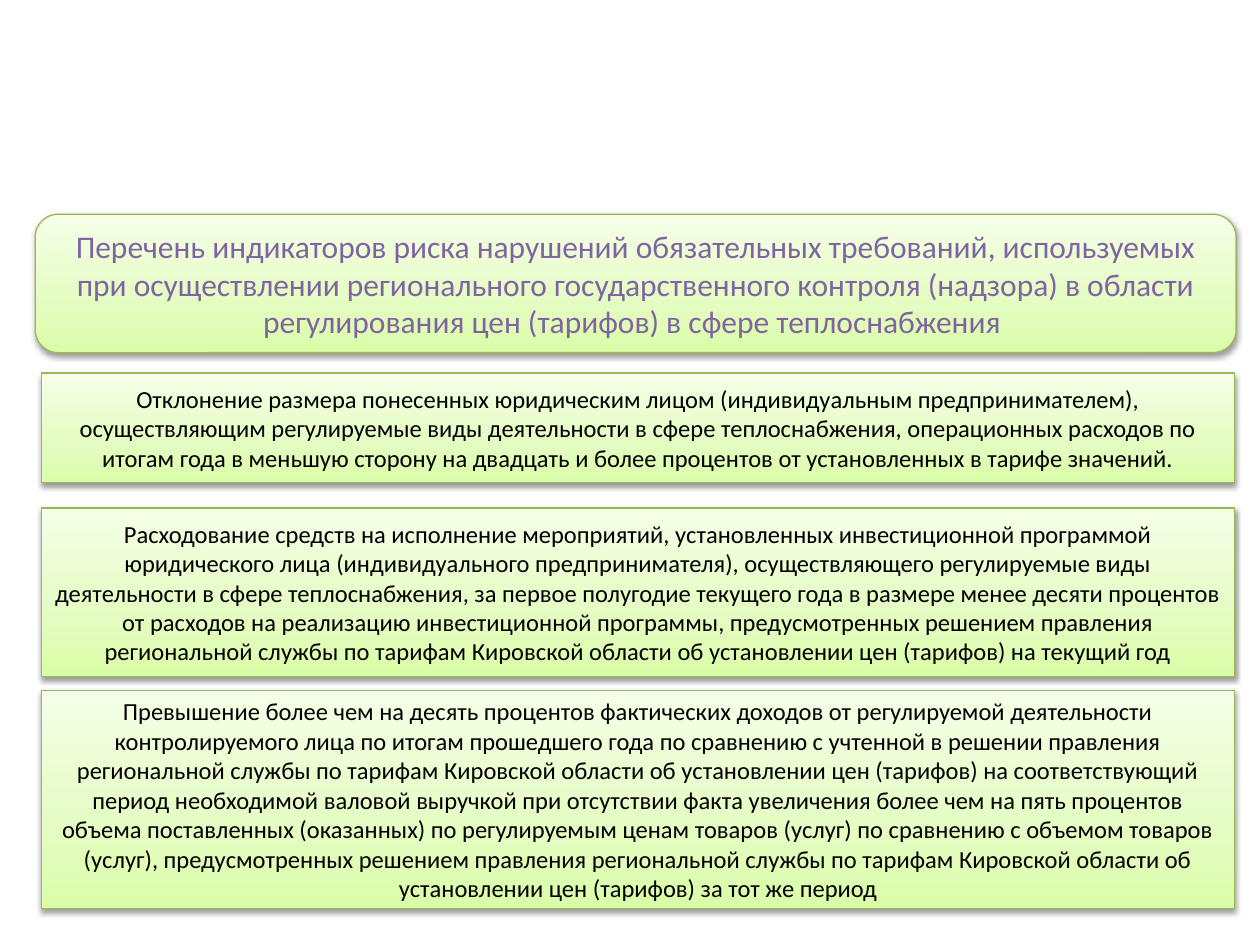
from copy import deepcopy

from lxml.etree import SubElement
from pptx import Presentation
from pptx.dml.color import RGBColor as Rgb
from pptx.enum.shapes import MSO_SHAPE as Shape
from pptx.enum.text import MSO_ANCHOR as Anchor, PP_ALIGN as Align
from pptx.oxml.ns import qn
from pptx.util import Cm, Pt

COLORS = {
    "lime": "DAFDA7",
    "pale_lime": "E4FCC2",
    "mist": "F5FFE7",
    "border": "98B955",
    "shadow": "000000",
    "title": "8064A2",
    "body": "000000",
}
GRADIENT = [(0, "lime"), (0.35, "pale_lime"), (1, "mist")]
TITLE = (
    "Перечень индикаторов риска нарушений обязательных требований, используемых "
    "при осуществлении регионального государственного контроля (надзора) в области "
    "регулирования цен (тарифов) в сфере теплоснабжения "
)
INDICATORS = [
    (7.52, 2.21,
     "Отклонение размера понесенных юридическим лицом (индивидуальным "
     "предпринимателем), осуществляющим регулируемые виды деятельности в сфере "
     "теплоснабжения, операционных расходов по итогам года в меньшую сторону на "
     "двадцать и более процентов от установленных в тарифе значений."),
    (10.24, 3.4,
     "Расходование средств на исполнение мероприятий, установленных инвестиционной "
     "программой юридического лица (индивидуального предпринимателя), "
     "осуществляющего регулируемые виды деятельности в сфере теплоснабжения, за "
     "первое полугодие текущего года в размере менее десяти процентов от расходов "
     "на реализацию инвестиционной программы, предусмотренных решением правления "
     "региональной службы по тарифам Кировской области об установлении цен "
     "(тарифов) на текущий год"),
    (13.92, 4.39,
     "Превышение более чем на десять процентов фактических доходов от регулируемой "
     "деятельности контролируемого лица по итогам прошедшего года по сравнению с "
     "учтенной в решении правления региональной службы по тарифам Кировской области "
     "об установлении цен (тарифов) на соответствующий период необходимой валовой "
     "выручкой при отсутствии факта увеличения более чем на пять процентов объема "
     "поставленных (оказанных) по регулируемым ценам товаров (услуг) по сравнению с "
     "объемом товаров (услуг), предусмотренных решением правления региональной "
     "службы по тарифам Кировской области об установлении цен (тарифов) за тот же "
     "период"),
]


class Panels:
    font_name = "Calibri"

    def __init__(self, page):
        self.page = page

    def color(self, name):
        return Rgb.from_string(COLORS[name])

    def paint(self, box):
        box.fill.gradient()
        box.fill.gradient_angle = 90
        stops = box._element.spPr.find(".//" + qn("a:gsLst"))
        stops.append(deepcopy(stops[-1]))
        for stop, (position, name) in zip(box.fill.gradient_stops, GRADIENT):
            stop.position = position
            stop.color.rgb = self.color(name)
        box.line.color.rgb = self.color("border")
        box.line.width = Pt(0.75)

    def cast_shadow(self, box):
        box.shadow.inherit = False
        effects = box._element.spPr.find(qn("a:effectLst"))
        shadow = SubElement(effects, qn("a:outerShdw"), blurRad="40000",
                            dist="20000", dir="5400000", rotWithShape="0")
        tone = SubElement(shadow, qn("a:srgbClr"), val=COLORS["shadow"])
        SubElement(tone, qn("a:alpha"), val="38000")

    def panel(self, kind, place, text, size, color):
        box = self.page.shapes.add_shape(kind, *map(Cm, place))
        self.paint(box)
        self.cast_shadow(box)
        frame = box.text_frame
        frame.word_wrap = True
        frame.vertical_anchor = Anchor.MIDDLE
        para = frame.paragraphs[0]
        para.alignment = Align.CENTER
        span = para.add_run()
        span.text = text
        span.font.color.rgb = self.color(color)
        for key, value in {"name": self.font_name, "size": Pt(size)}.items():
            setattr(span.font, key, value)

    def title(self, place, text):
        self.panel(Shape.ROUNDED_RECTANGLE, place, text, 18, "title")

    def indicator(self, place, text):
        self.panel(Shape.RECTANGLE, place, text, 14, "body")


def main():
    deck = Presentation()
    deck.slide_width, deck.slide_height = Cm(25.4), Cm(19.05)
    panels = Panels(deck.slides.add_slide(deck.slide_layouts[6]))
    panels.title((0.71, 4.32, 24.21, 2.79), TITLE)
    for top, height, text in INDICATORS:
        panels.indicator((0.84, top, 24.05, height), text)
    deck.save("out.pptx")


if __name__ == "__main__":
    main()
